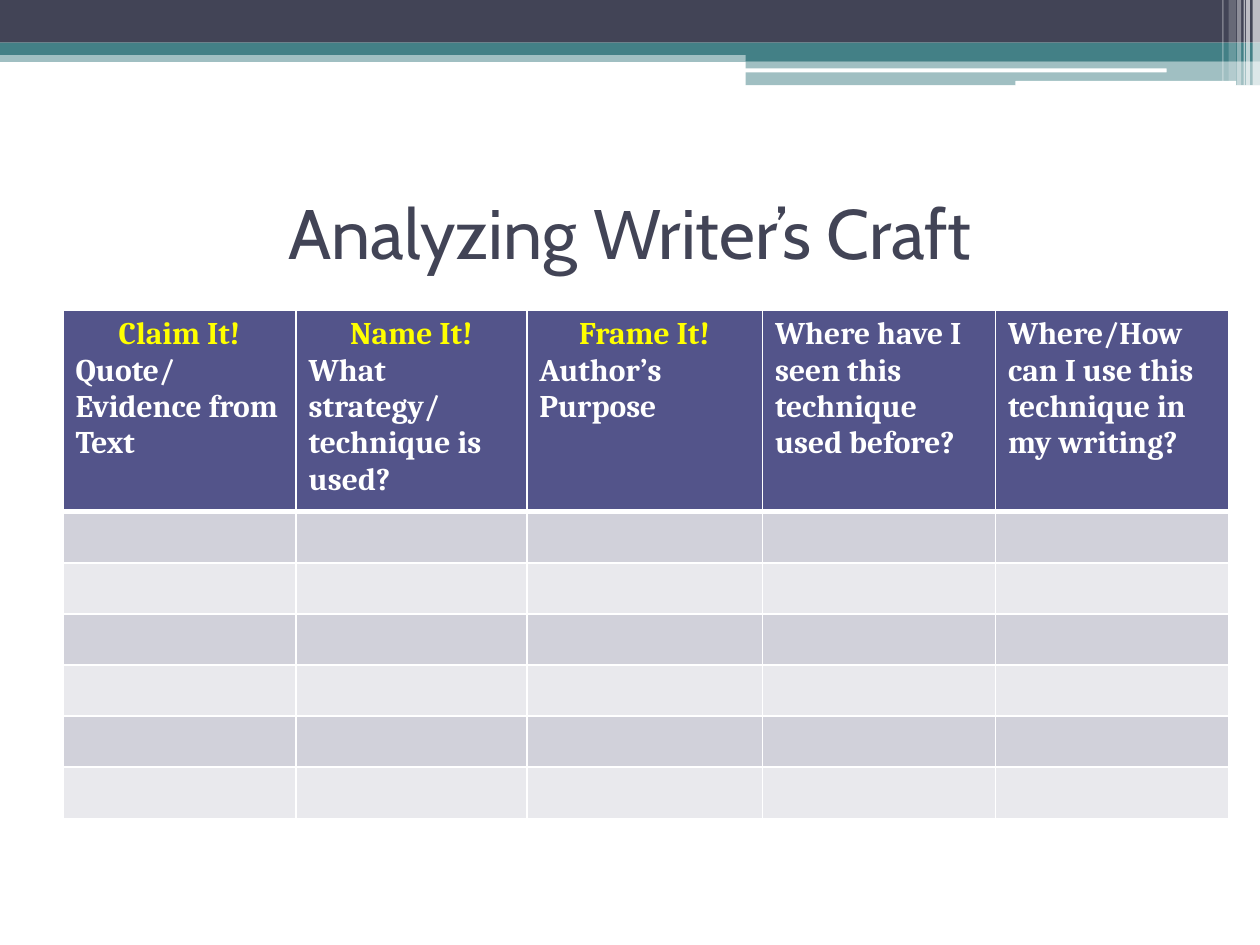
from lxml import etree
from pptx import Presentation
from pptx import util as u
from pptx.dml.color import RGBColor
from pptx.enum import shapes, text
from pptx.oxml.ns import qn

COLORS = {
    "white": "FFFFFF", "navy": "424456", "teal": "438086", "yellow": "FFFF00",
    "header": "53548A", "dark_band": "D1D1DA", "light_band": "E9E9ED",
}
BANDS = [
    (0, 1.02, 25.4, 0.23, "teal", 50),
    (0, 0, 25.4, 0.86, "navy", 100),
    (0, 0.86, 25.4, 0.25, "teal", 100),
    (15.03, 0.98, 10.37, 0.25, "teal", 100),
    (15.03, 1.22, 10.37, 0.5, "teal", 50),
]
ROUNDED_BARS = [(15.01, 1.38, 8.51, 0.08), (20.47, 1.63, 4.45, 0.1)]
STRIPES = [
    (25.25, 0.15, 1.73, 65), (25.12, 0.08, 1.73, 65), (25.07, 0.03, 1.73, 60),
    (24.94, 0.08, 1.73, 40), (24.77, 0.15, 1.63, 20), (24.64, 0.03, 1.63, 30),
]
HEADERS = [
    ("Claim It!", "Quote/ Evidence from Text"),
    ("Name It!", "What strategy/ technique is used?"),
    ("Frame It!", "Author’s Purpose"),
    ("", "Where have I seen this technique used before?"),
    ("", "Where/How can I use this technique in my writing?"),
]
COLUMN_WIDTHS = [4.7, 4.65, 4.75, 4.7, 4.7]
ROW_HEIGHTS = [3.94] + [1.03] * 6


class SlideBuilder:
    """Hold the style and the current page, and add elements to it."""

    title_format = {"name": "Cabin", "size": u.Pt(40), "bold": False}
    header_format = {"name": "Cambria", "size": u.Pt(18), "bold": True}

    def __init__(self, page):
        self.page = page

    def color(self, name):
        return RGBColor.from_string(COLORS[name])

    def paint(self, target, color, opacity=100):
        target.fill.solid()
        target.fill.fore_color.rgb = self.color(color)
        if opacity < 100:
            tint = target._element.spPr.find(".//" + qn("a:srgbClr"))
            etree.SubElement(tint, qn("a:alpha"), val=str(opacity * 1000))

    def bar(self, left, top, width, height, color, opacity=100, kind="RECTANGLE"):
        shape = self.page.shapes.add_shape(
            shapes.MSO_SHAPE[kind], *map(u.Cm, (left, top, width, height)))
        self.paint(shape, color, opacity)
        shape.line.fill.background()
        shape.shadow.inherit = False

    def add_words(self, para, words, color, style, align):
        para.alignment = align
        span = para.add_run()
        span.text = words
        for key, value in style.items():
            setattr(span.font, key, value)
        span.font.color.rgb = self.color(color)

    def title(self, words, left, top, width, height):
        box = self.page.shapes.add_textbox(*map(u.Cm, (left, top, width, height)))
        frame = box.text_frame
        frame.word_wrap = True
        frame.vertical_anchor = text.MSO_ANCHOR.MIDDLE
        self.add_words(frame.paragraphs[0], words, "navy", self.title_format,
                       text.PP_ALIGN.CENTER)

    def borders(self, cell, top, bottom):
        properties = cell._tc.get_or_add_tcPr()
        widths = {"lnL": 1, "lnR": 1, "lnT": top, "lnB": bottom}
        for index, (side, width) in enumerate(widths.items()):
            line = etree.Element(qn("a:" + side), w=str(u.Pt(width)))
            fill = etree.SubElement(line, qn("a:solidFill"))
            etree.SubElement(fill, qn("a:srgbClr"), val=COLORS["white"])
            properties.insert(index, line)

    def header(self, cell, label, question):
        frame = cell.text_frame
        para = frame.paragraphs[0]
        if label:
            self.add_words(para, label, "yellow", self.header_format,
                           text.PP_ALIGN.CENTER)
            para = frame.add_paragraph()
        self.add_words(para, question, "white", self.header_format,
                       text.PP_ALIGN.LEFT)

    def table(self, left, top):
        size = (sum(COLUMN_WIDTHS), sum(ROW_HEIGHTS))
        table = self.page.shapes.add_table(
            len(ROW_HEIGHTS), len(COLUMN_WIDTHS),
            *map(u.Cm, (left, top, *size))).table
        table.horz_banding = False
        for column, width in zip(table.columns, COLUMN_WIDTHS):
            column.width = u.Cm(width)
        for number, (row, height) in enumerate(zip(table.rows, ROW_HEIGHTS)):
            row.height = u.Cm(height)
            band = "dark_band" if number % 2 else "light_band"
            for cell in row.cells:
                self.paint(cell, band if number else "header")
                self.borders(cell, 3 if number == 1 else 1, 1 if number else 3)
        for cell, words in zip(table.rows[0].cells, HEADERS):
            self.header(cell, *words)


def main():
    deck = Presentation()
    deck.slide_width, deck.slide_height = u.Cm(25.4), u.Cm(19.05)
    builder = SlideBuilder(deck.slides.add_slide(deck.slide_layouts[6]))
    for band in BANDS:
        builder.bar(*band)
    for place in ROUNDED_BARS:
        builder.bar(*place, "white", kind="ROUNDED_RECTANGLE")
    for left, width, height, opacity in STRIPES:
        builder.bar(left, 0, width, height, "white", opacity)
    builder.title("Analyzing Writer’s Craft", 1.27, 3.18, 22.86, 2.97)
    builder.table(1.27, 6.25)
    deck.save("out.pptx")


if __name__ == "__main__":
    main()
